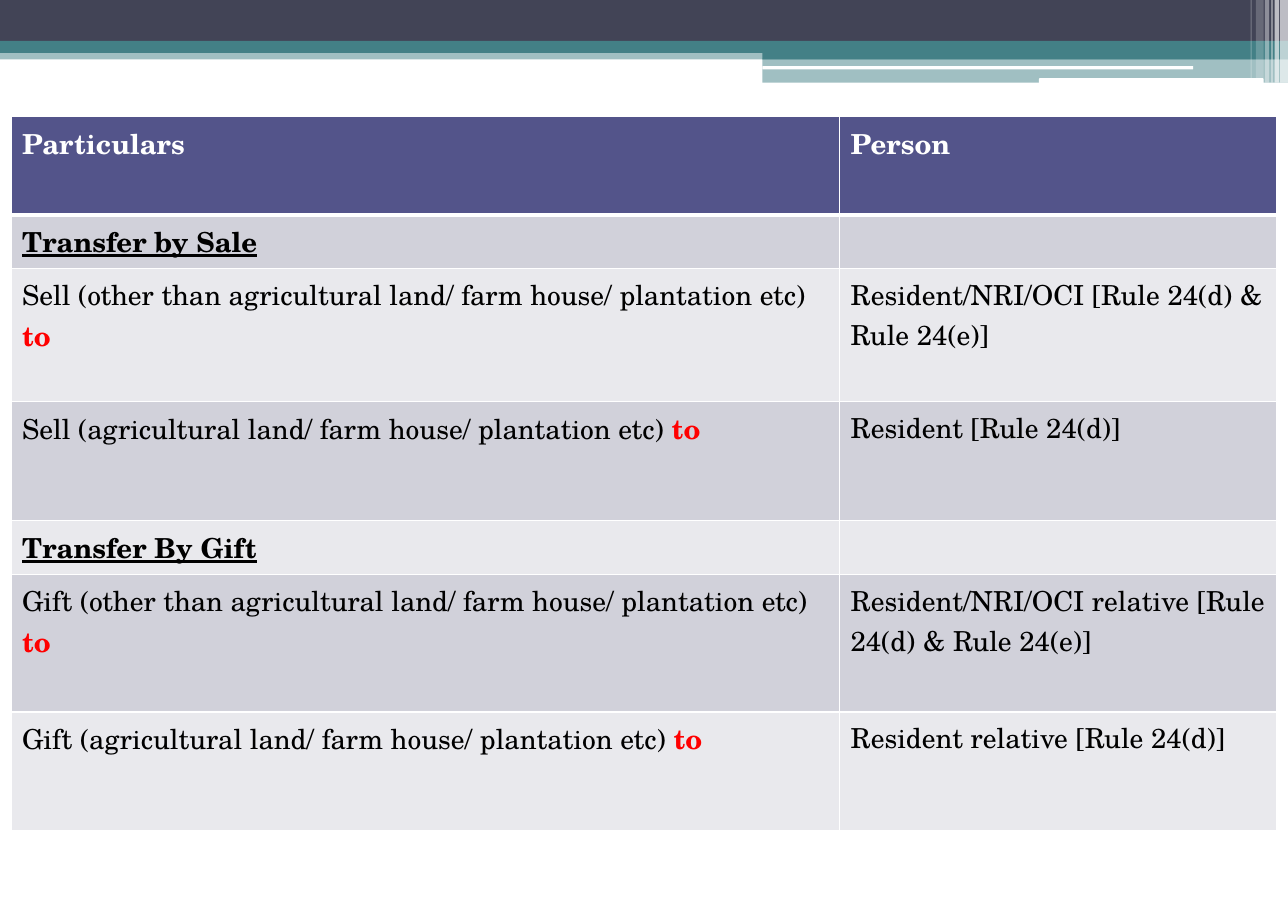
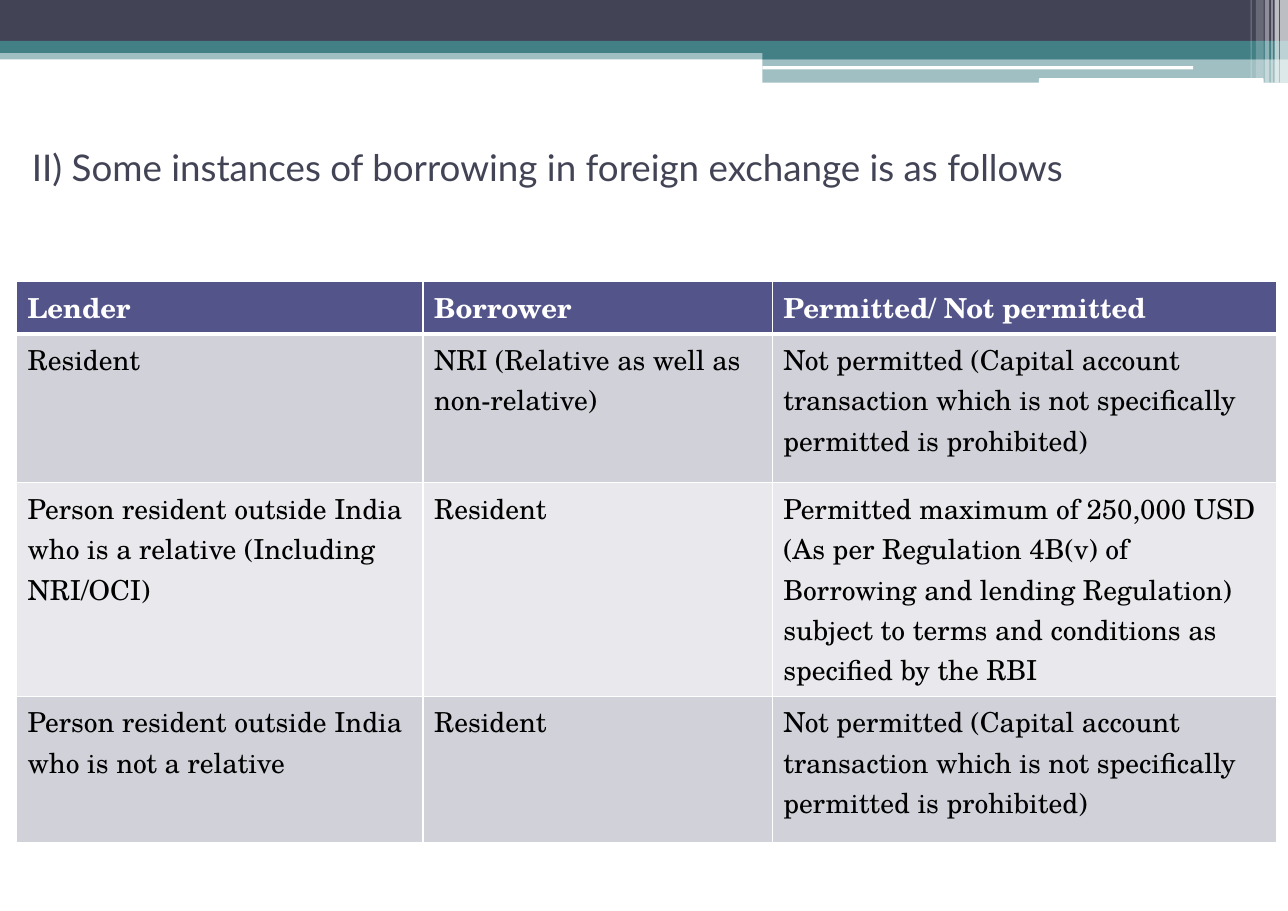
from lxml.etree import SubElement
from pptx import Presentation
from pptx.dml.color import RGBColor
from pptx.enum.shapes import MSO_SHAPE
from pptx.enum.text import MSO_ANCHOR
from pptx.oxml.ns import qn
from pptx.util import Inches, Pt

WHITE, BLACK, RED = "FFFFFF", "000000", "FF0000"
NAVY, TEAL, INDIGO = "424456", "438086", "53548A"
STRIPES = ["E9E9ED", "D1D1DA"]
TITLE_FONT, TABLE_FONT = "Lato", "TeX Gyre Schola"
SLIDE_W, SLIDE_H = 11.69, 8.27
RIGHT_X = 6.92
RIGHT_W = SLIDE_W - RIGHT_X
RECT, ROUND = MSO_SHAPE.RECTANGLE, MSO_SHAPE.ROUNDED_RECTANGLE

BANDS = [
    (RECT, 0, 0.44, SLIDE_W, 0.1, TEAL, 50),
    (RECT, 0, 0, SLIDE_W, 0.38, NAVY, 100),
    (RECT, 0, 0.37, SLIDE_W, 0.11, TEAL, 100),
    (RECT, RIGHT_X, 0.43, RIGHT_W, 0.11, TEAL, 100),
    (RECT, RIGHT_X, 0.53, RIGHT_W, 0.22, TEAL, 50),
    (ROUND, RIGHT_X, 0.6, 3.91, 0.03, WHITE, 100),
    (ROUND, 9.43, 0.71, 2.04, 0.05, WHITE, 100),
    (RECT, 11.62, 0, 0.07, 0.75, WHITE, 65),
    (RECT, 11.57, 0, 0.04, 0.75, WHITE, 65),
    (RECT, 11.54, 0, 0.01, 0.75, WHITE, 60),
    (RECT, 11.48, 0, 0.04, 0.75, WHITE, 40),
    (RECT, 11.4, 0, 0.07, 0.71, WHITE, 20),
    (RECT, 11.35, 0, 0.01, 0.71, WHITE, 30),
]

HEADER = (WHITE, True, False)
SECTION = (BLACK, True, True)
PLAIN = (BLACK, False, False)
ACCENT = (RED, True, False)
TO = ("to", ACCENT)
PROHIBITED = ("Not permitted (Capital account transaction which is "
              "not specifically permitted is prohibited)")

SLIDES = [
    {
        "title": None,
        "at": (0.1, 1.06),
        "cols": [7.52, 3.97],
        "heights": [0.89, 0.48, 1.21, 1.08, 0.48, 1.25, 1.08],
        "rows": [
            ["Particulars", "Person"],
            [[("Transfer by Sale", SECTION)], ""],
            [[("Sell (other than agricultural land/ farm house/ plantation etc) ", PLAIN), TO],
             "Resident/NRI/OCI [Rule 24(d) & Rule 24(e)]"],
            [[("Sell (agricultural land/ farm house/ plantation etc) ", PLAIN), TO],
             "Resident [Rule 24(d)]"],
            [[("Transfer By Gift", SECTION)], ""],
            [[("Gift (other than agricultural land/ farm house/ plantation etc) ", PLAIN), TO],
             "Resident/NRI/OCI relative [Rule 24(d) & Rule 24(e)]"],
            [[("Gift (agricultural land/ farm house/ plantation etc) ", PLAIN), TO],
             "Resident relative [Rule 24(d)]"],
        ],
    },
    {
        "title": "II) Some instances of borrowing in foreign exchange is as follows",
        "at": (0.15, 2.55),
        "cols": [3.69, 3.17, 4.58],
        "heights": [0.48, 1.35, 1.94, 1.33],
        "rows": [
            ["Lender", "Borrower", "Permitted/ Not permitted"],
            ["Resident", "NRI (Relative as well as non-relative)", PROHIBITED],
            ["Person resident outside India who is a relative (Including NRI/OCI)",
             "Resident",
             "Permitted maximum of 250,000 USD (As per Regulation 4B(v) of Borrowing and "
             "lending Regulation) subject to terms and conditions as specified by the RBI"],
            ["Person resident outside India who is not a relative", "Resident", PROHIBITED],
        ],
    },
]


def paint(target, color):
    target.solid()
    target.fore_color.rgb = RGBColor.from_string(color)


def add_border(cell, side, width):
    ln = SubElement(cell._tc.get_or_add_tcPr(), qn(f"a:ln{side}"), w=str(Pt(width)))
    SubElement(SubElement(ln, qn("a:solidFill")), qn("a:srgbClr"), val=WHITE)


prs = Presentation()
prs.slide_width, prs.slide_height = Inches(SLIDE_W), Inches(SLIDE_H)

for content in SLIDES:
    s = prs.slides.add_slide(prs.slide_layouts[6])

    for kind, x, y, w, h, color, opacity in BANDS:
        sp = s.shapes.add_shape(kind, Inches(x), Inches(y), Inches(w), Inches(h))
        sp.shadow.inherit = False
        sp.line.fill.background()
        paint(sp.fill, color)
        if opacity < 100:
            clr = sp.element.xpath("./p:spPr/a:solidFill/a:srgbClr")[0]
            SubElement(clr, qn("a:alpha"), val=str(opacity * 1000))

    if content["title"]:
        tf = s.shapes.add_textbox(Inches(0.18), Inches(1.05), Inches(10.42), Inches(0.92)).text_frame
        tf.word_wrap = True
        tf.vertical_anchor = MSO_ANCHOR.MIDDLE
        tf.margin_left = tf.margin_right = Inches(0.11)
        tf.margin_top = tf.margin_bottom = Inches(0.06)
        p = tf.paragraphs[0]
        p.text = content["title"]
        p.font.name, p.font.size = TITLE_FONT, Pt(24)
        paint(p.font.fill, NAVY)

    rows, cols, heights = content["rows"], content["cols"], content["heights"]
    x, y = content["at"]
    table = s.shapes.add_table(len(rows), len(cols), Inches(x), Inches(y),
                               Inches(sum(cols)), Inches(sum(heights))).table
    table.first_row = table.horz_banding = False
    for column, width in zip(table.columns, cols):
        column.width = Inches(width)

    for i, (row, height, values) in enumerate(zip(table.rows, heights, rows)):
        row.height = Inches(height)
        base_style = PLAIN if i else HEADER
        for cell, value in zip(row.cells, values):
            for side in "LRTB":
                under_header = (i, side) in [(0, "B"), (1, "T")]
                add_border(cell, side, 3 if under_header else 1)
            paint(cell.fill, STRIPES[i % 2] if i else INDIGO)
            p = cell.text_frame.paragraphs[0]
            p.font.name, p.font.size = TABLE_FONT, Pt(18)
            runs = [(value, base_style)] if isinstance(value, str) else value
            for text, (color, bold, underline) in runs:
                if text:
                    r = p.add_run()
                    r.text = text
                    r.font.bold, r.font.underline = bold, underline
                    paint(r.font.fill, color)

prs.save("out.pptx")
